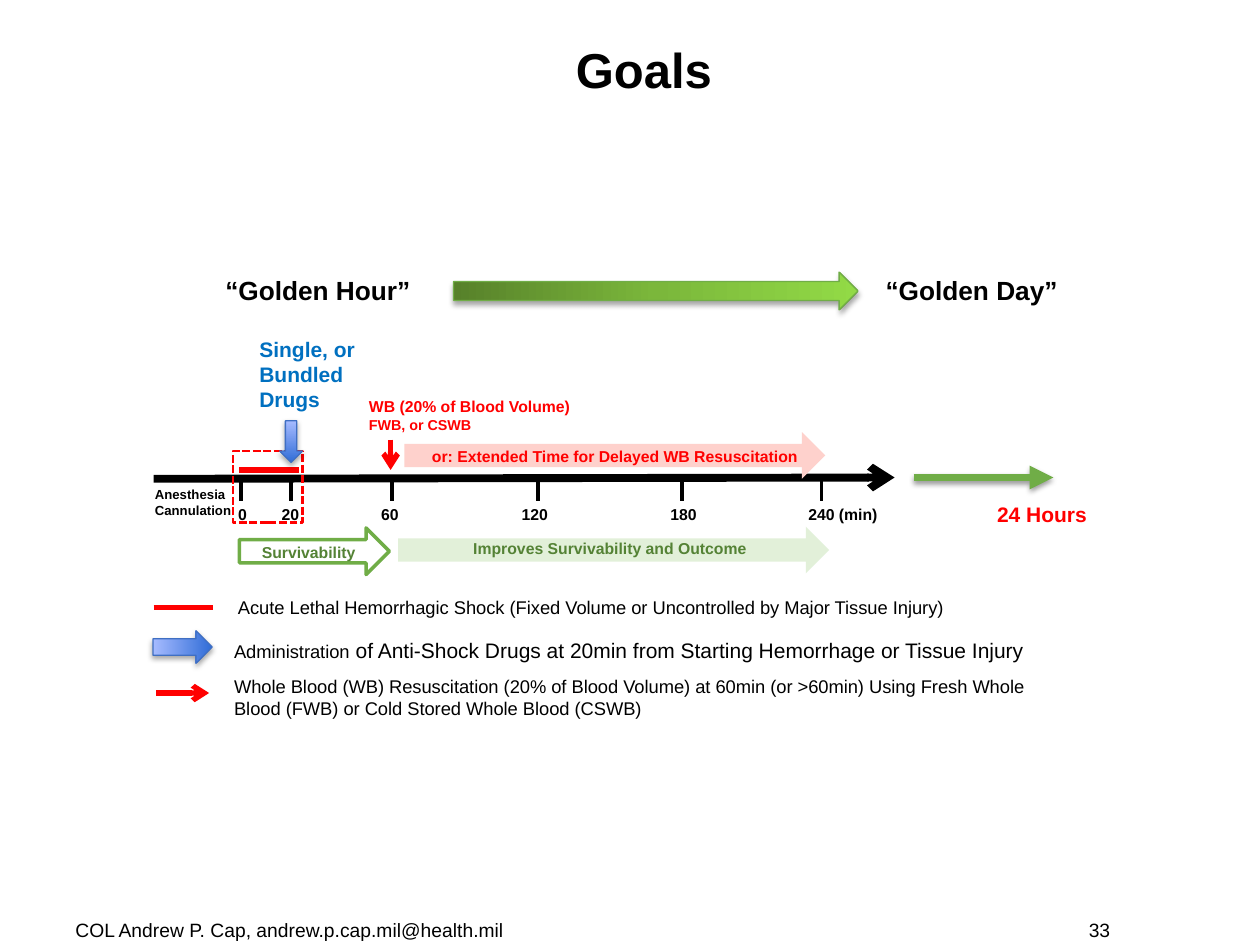
import pptx
import pptx.util
import pptx.oxml
import pptx.oxml.ns
import pptx.dml.color
import pptx.enum.dml
import pptx.enum.shapes
import pptx.enum.text
from dataclasses import dataclass
from typing import Optional
from pptx.util import Inches

HUES = {
    "black": "000000", "red": "FF0000", "blue": "0070C0", "edge": "3F6FC3",
    "green": "70AD47", "moss": "548235", "mint": "E2F0D9", "pink": "FED1CC",
    "navy": "316DD7", "sky": "A6BBFF",
    "leaf": "57812A", "grass": "7BB73B", "lime": "92DA46",
}
NS = pptx.oxml.ns.nsdecls("a")
KIND = pptx.enum.shapes.MSO_SHAPE
ALIGN = pptx.enum.text.PP_ALIGN
MID = pptx.enum.text.MSO_ANCHOR.MIDDLE
DASH = pptx.enum.dml.MSO_LINE.SQUARE_DOT

# Gradients: stops by percent, then the angle
DRUG = (((0, "navy"), (100, "sky")), 270)
GOLD = (((0, "leaf"), (50, "grass"), (100, "lime")), 0)


@dataclass
class Label:
    box: tuple
    lines: list  # each line is a list of (words, size)
    hue: str = "black"
    bold: bool = True
    align: Optional[int] = None
    anchor: Optional[int] = None


@dataclass
class Block:
    kind: int
    box: tuple
    fill: object = None  # hue name or gradient
    line: Optional[str] = None
    width: float = 0.75
    dash: Optional[int] = None
    turn: int = 0
    shade: bool = False


@dataclass
class Stroke:
    start: tuple
    end: tuple
    hue: str
    width: float
    head: Optional[str] = None
    shade: bool = False


def tint(name: str):
    return pptx.dml.color.RGBColor.from_string(HUES[name])


def effect(part, shade: bool, alpha: int = 35, drop: float = 1.8) -> None:
    """Give a part its soft shadow, or none."""
    glow = (f'<a:outerShdw blurRad="{pptx.util.Pt(3.1)}" dist="{pptx.util.Pt(drop)}" '
            f'dir="5400000" rotWithShape="0"><a:srgbClr val="{HUES["black"]}">'
            f'<a:alpha val="{alpha * 1000}"/></a:srgbClr></a:outerShdw>') if shade else ""
    part._element.spPr.append(
        pptx.oxml.parse_xml(f"<a:effectLst {NS}>{glow}</a:effectLst>"))


def blend(shape, grad: tuple) -> None:
    stops, angle = grad
    marks = "".join(f'<a:gs pos="{pos * 1000}"><a:srgbClr val="{HUES[hue]}"/></a:gs>'
                    for pos, hue in stops)
    shape._element.spPr.insert(2, pptx.oxml.parse_xml(
        f'<a:gradFill {NS} rotWithShape="1"><a:gsLst>{marks}</a:gsLst>'
        f'<a:lin ang="{angle * 60000}" scaled="0"/></a:gradFill>'))


def write(slide, label: Label) -> None:
    frame = slide.shapes.add_textbox(*map(Inches, label.box)).text_frame
    frame.word_wrap = True
    if label.anchor is not None:
        frame.vertical_anchor = label.anchor
    for i, line in enumerate(label.lines):
        para = frame.add_paragraph() if i else frame.paragraphs[0]
        para.alignment = label.align
        for words, size in line:
            run = para.add_run()
            run.text = words
            looks = {"name": "Arial", "size": pptx.util.Pt(size), "bold": label.bold}
            for key, value in looks.items():
                setattr(run.font, key, value)
            run.font.color.rgb = tint(label.hue)


def place(slide, block: Block) -> None:
    shape = slide.shapes.add_shape(block.kind, *map(Inches, block.box))
    shape.rotation = block.turn
    if isinstance(block.fill, tuple):
        blend(shape, block.fill)
    elif block.fill:
        shape.fill.solid()
        shape.fill.fore_color.rgb = tint(block.fill)
    else:
        shape.fill.background()
    if block.line:
        shape.line.color.rgb = tint(block.line)
        shape.line.width = pptx.util.Pt(block.width)
        if block.dash is not None:
            shape.line.dash_style = block.dash
    else:
        shape.line.fill.background()
    effect(shape, block.shade)


def draw(slide, stroke: Stroke) -> None:
    line = slide.shapes.add_connector(
        pptx.enum.shapes.MSO_CONNECTOR.STRAIGHT,
        *map(Inches, stroke.start + stroke.end))
    line.line.color.rgb = tint(stroke.hue)
    line.line.width = pptx.util.Pt(stroke.width)
    if stroke.head:
        line.line._get_or_add_ln().append(
            pptx.oxml.parse_xml(f'<a:tailEnd {NS} type="{stroke.head}"/>'))
    effect(line, stroke.shade, 38, 1.6)


def mark(box: tuple, words: str, size: float, hue: str = "black", **more) -> Label:
    return Label(box, [[(words, size)]], hue, **more)


MIDDLE = {"align": ALIGN.CENTER}
PLAIN = {"bold": False}

# Time axis: tick place, then label left, width and words
TICKS = [(1.91, 1.69, 0.47, "0"), (2.31, 1.95, 0.71, "20"), (3.11, 2.88, 0.43, "60"),
         (4.27, 4.03, 0.43, "120"), (5.41, 5.21, 0.43, "180"), (6.52, 6.22, 0.94, "240 (min)")]
AXIS = [Stroke((1.22, 3.8), (7.1, 3.79), "black", 4.5, "arrow"),
        Stroke((1.9, 3.73), (2.37, 3.73), "red", 3)]
for x, left, wide, words in TICKS:
    AXIS += [Stroke((x, 3.8), (x, 3.98), "black", 2.25),
             mark((left, 3.96, wide, 0.25), words, 9, **MIDDLE)]

# Treatments and outcomes along the axis
PLAN = [
    Label((1.13, 3.81, 0.99, 0.35), [[("Anesthesia", 7.5)], [("Cannulation", 7.5)]]),
    Stroke((3.1, 3.49), (3.1, 3.73), "red", 3, "arrow"),
    Label((2.83, 3.1, 1.81, 0.39),
          [[("WB (20% of Blood Volume)", 9)], [("FWB, or CSWB", 8.2)]], "red"),
    mark((1.96, 2.62, 1.12, 0.71), "Single, or Bundled Drugs", 12, "blue"),
    Block(KIND.RIGHT_ARROW, (1.9, 4.19, 1.19, 0.37), line="green", width=2),
    Block(KIND.RIGHT_ARROW, (3.16, 4.18, 3.42, 0.37), "mint"),
    mark((1.9, 4.26, 1.1, 0.25), "Survivability", 9, "moss", **MIDDLE),
    Block(KIND.RIGHT_ARROW, (3.21, 3.43, 3.34, 0.37), "pink"),
    mark((3.33, 3.5, 3.53, 0.25), "or: Extended Time for Delayed WB Resuscitation", 9, "red"),
    mark((3.46, 4.23, 2.76, 0.25), "Improves Survivability and Outcome", 9, "moss", **MIDDLE),
    Block(KIND.RECTANGLE, (1.85, 3.58, 0.55, 0.57), line="red", width=1.5, dash=DASH),
    Block(KIND.DOWN_ARROW, (2.22, 3.34, 0.18, 0.33), DRUG, "edge", shade=True),
]

# Legend
LEGEND = [
    Stroke((1.22, 4.82), (1.69, 4.82), "red", 3),
    mark((1.79, 4.68, 7.15, 0.28), "Acute Lethal Hemorrhagic Shock (Fixed Volume or "
         "Uncontrolled by Major Tissue Injury)", 10.5, **PLAIN),
    Block(KIND.DOWN_ARROW, (1.32, 4.9, 0.26, 0.47), DRUG, "edge", turn=270, shade=True),
    Label((1.76, 5.01, 7.4, 0.3), [[
        ("Administration", 10.5),
        (" of Anti-Shock Drugs at 20min from Starting Hemorrhage or Tissue Injury", 12)]],
        **PLAIN),
    Stroke((1.24, 5.5), (1.66, 5.5), "red", 3, "arrow"),
    mark((1.76, 5.31, 6.84, 0.45), "Whole Blood (WB) Resuscitation (20% of Blood Volume) at "
         "60min (or >60min) Using Fresh Whole Blood (FWB) or Cold Stored Whole Blood (CSWB)",
         10.5, **PLAIN),
]

# From golden hour to golden day
SPAN = [
    mark((1.69, 2.13, 2.16, 0.35), "“Golden Hour”", 15),
    Stroke((7.25, 3.79), (8.36, 3.79), "green", 4.5, "triangle", True),
    mark((7.8, 3.93, 0.94, 0.3), "24 Hours", 12, "red", **MIDDLE),
    Block(KIND.RIGHT_ARROW, (3.6, 2.16, 3.21, 0.3), GOLD, "green", shade=True),
    mark((6.93, 2.13, 1.75, 0.35), "“Golden Day”", 15),
]

# Title and footer
TITLE = mark((0.95, 0.07, 8.32, 0.95), "Goals", 28, anchor=MID, **MIDDLE)
FOOT = [
    mark((6.58, 7.25, 2.33, 0.26), "33", 11, align=ALIGN.RIGHT, anchor=MID, **PLAIN),
    mark((0.5, 7.25, 3.66, 0.26), "COL Andrew P. Cap, andrew.p.cap.mil@health.mil", 11,
         anchor=MID, **PLAIN),
]


def main() -> None:
    deck = pptx.Presentation()
    deck.slide_width, deck.slide_height = Inches(10), Inches(7.5)
    slide = deck.slides.add_slide(deck.slide_layouts[6])
    tools = {Label: write, Block: place, Stroke: draw}
    for part in [TITLE, *AXIS, *PLAN, *LEGEND, *SPAN, *FOOT]:
        tools[type(part)](slide, part)
    deck.save("out.pptx")


if __name__ == "__main__":
    main()
